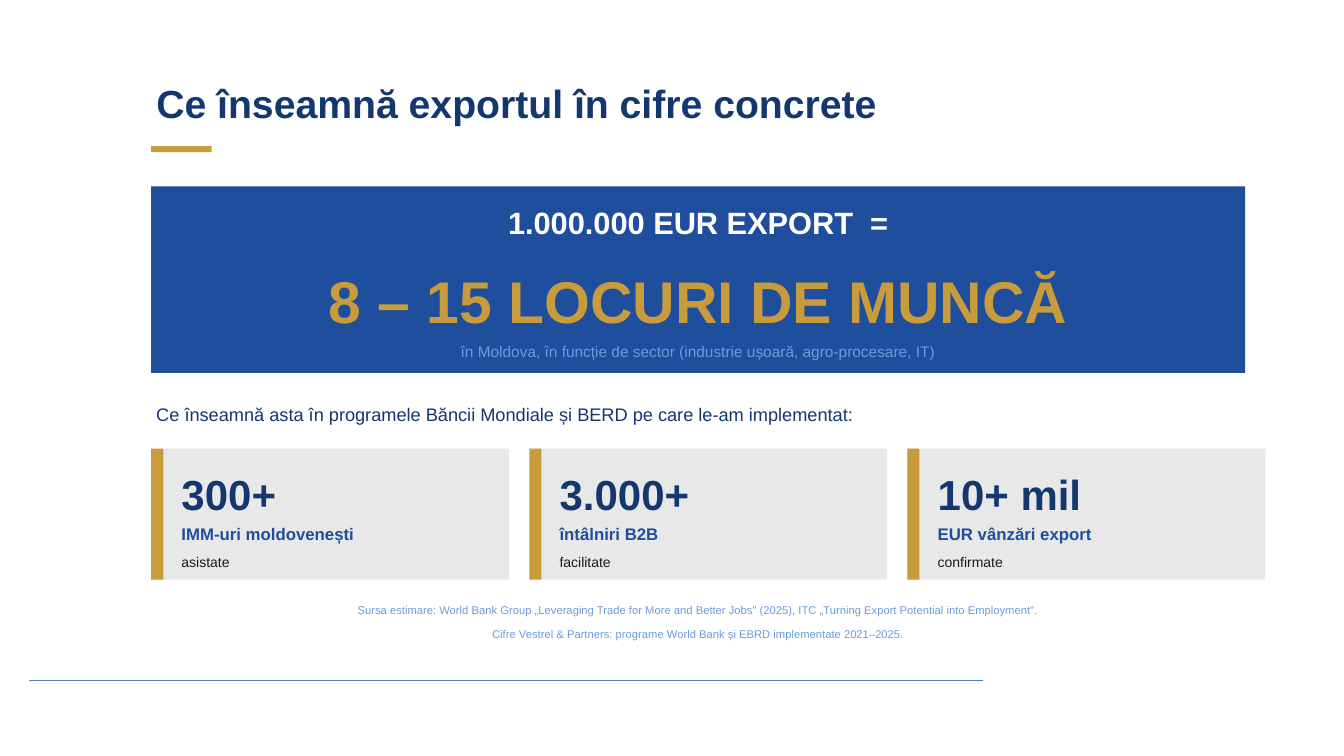
from pptx import Presentation
from pptx.dml.color import RGBColor
from pptx.enum.shapes import MSO_CONNECTOR, MSO_SHAPE
from pptx.enum.text import MSO_ANCHOR, MSO_AUTO_SIZE, PP_ALIGN
from pptx.oxml.ns import qn
from pptx.util import Pt
from lxml import etree

PX = 9144  # 100 px to the inch
NAVY, BLUE, GOLD, SKY = "14376F", "1F4E9D", "C89B3C", "6B9BD9"
GREY, INK, WHITE, RULE = "E8E8E8", "1A1A1A", "FFFFFF", "4F81BD"
LEFT, BANNER_W = 150, 1085

prs = Presentation()
prs.slide_width, prs.slide_height = 1333 * PX, 750 * PX
s = prs.slides.add_slide(prs.slide_layouts[5])


def text(words, x, y, w, h, size, color, bold=False, align=PP_ALIGN.LEFT, sp=None):
    """Write one line in the given placeholder, or in a new text box."""
    if sp is None:
        sp = s.shapes.add_textbox(0, 0, 0, 0)
    sp.left, sp.top, sp.width, sp.height = x * PX, y * PX, w * PX, h * PX
    tf = sp.text_frame
    tf.word_wrap = True
    tf.auto_size = MSO_AUTO_SIZE.SHAPE_TO_FIT_TEXT
    tf.vertical_anchor = MSO_ANCHOR.TOP
    tf.margin_left = tf.margin_right = 5 * PX
    tf.margin_top = tf.margin_bottom = 2 * PX
    p = tf.paragraphs[0]
    p.alignment, p.line_spacing = align, 1.15
    r = p.add_run()
    r.text = words
    r.font.name, r.font.size, r.font.bold = "Arial", Pt(size), bold
    r.font.color.rgb = RGBColor.from_string(color)


def bar(x, y, w, h, color):
    sp = s.shapes.add_shape(MSO_SHAPE.RECTANGLE, x * PX, y * PX, w * PX, h * PX)
    sp.shadow.inherit = False
    sp.fill.solid()
    sp.fill.fore_color.rgb = RGBColor.from_string(color)
    sp.line.fill.background()


footer = s.shapes.add_connector(MSO_CONNECTOR.STRAIGHT, 975 * PX, 675 * PX, 29 * PX, 675 * PX)
footer.line.color.rgb = RGBColor.from_string(RULE)
footer.line.width = Pt(0.75)
etree.SubElement(footer._element.spPr, qn("a:effectLst"))

text("Ce înseamnă exportul în cifre concrete", LEFT, 70, 1100, 70, 28, NAVY,
     bold=True, sp=s.shapes.title)
bar(LEFT, 145, 60, 6, GOLD)

bar(LEFT, 185, BANNER_W, 185, BLUE)
centred_lines = [
    ("1.000.000 EUR EXPORT  =", 195, 55, 22, WHITE, True),
    ("8 – 15 LOCURI DE MUNCĂ", 250, 85, 42, GOLD, True),
    ("în Moldova, în funcție de sector (industrie ușoară, agro-procesare, IT)",
     335, 40, 11, SKY, False),
    ("Sursa estimare: World Bank Group „Leveraging Trade for More and Better Jobs\" (2025), "
     "ITC „Turning Export Potential into Employment\".", 595, 22, 8, SKY, False),
    ("Cifre Vestrel & Partners: programe World Bank și EBRD implementate 2021–2025.",
     618, 18, 8, SKY, False),
]
for words, y, h, size, color, bold in centred_lines:
    text(words, LEFT, y, BANNER_W, h, size, color, bold=bold, align=PP_ALIGN.CENTER)

text("Ce înseamnă asta în programele Băncii Mondiale și BERD pe care le-am implementat:",
     LEFT, 395, 1100, 27, 13, NAVY)

results = [
    ("300+", "IMM-uri moldovenești", "asistate"),
    ("3.000+", "întâlniri B2B", "facilitate"),
    ("10+ mil", "EUR vânzări export", "confirmate"),
]
for i, (figure, label, detail) in enumerate(results):
    x = LEFT + 375 * i
    bar(x, 445, 355, 130, GREY)
    bar(x, 445, 12, 130, GOLD)
    text(figure, x + 25, 455, 325, 57, 30, NAVY, bold=True)
    text(label, x + 25, 515, 325, 25, 12, BLUE, bold=True)
    text(detail, x + 25, 545, 325, 25, 10, INK)

prs.save("out.pptx")
